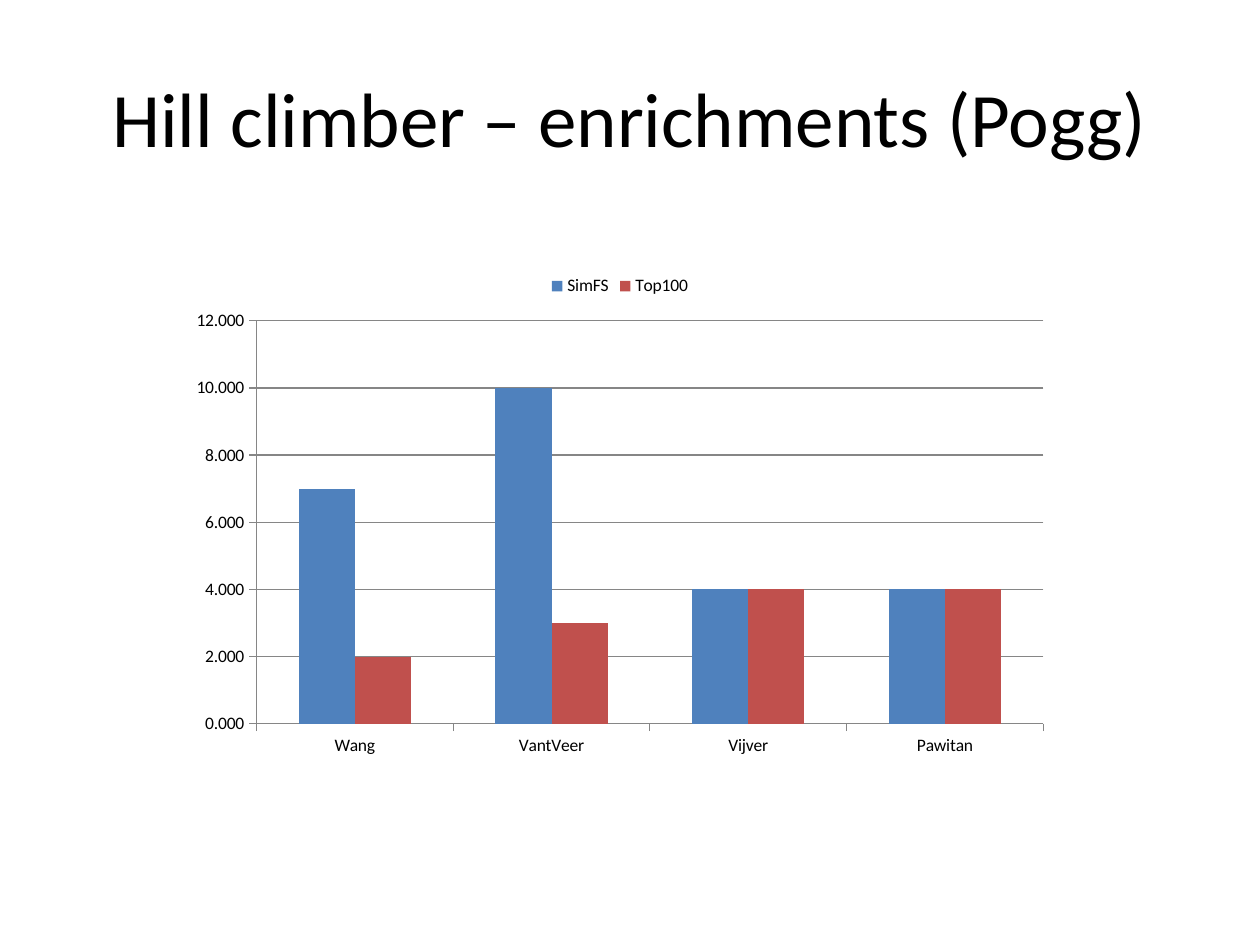
from pptx import Presentation
from pptx import util as u
from pptx.chart.data import CategoryChartData
from pptx.dml.color import RGBColor
from pptx.enum import chart as ch, text

BLACK = RGBColor(0x00, 0x00, 0x00)
GREY = RGBColor(0x86, 0x86, 0x86)
BLUE = RGBColor(0x4F, 0x81, 0xBD)
RED = RGBColor(0xC0, 0x50, 0x4D)


class Deck:
    """Holds the style and the current slide; boxes are shares of its size."""

    font = "Calibri"
    title_size = 44
    chart_size = 10
    line_width = 0.75

    def __init__(self, width, height):
        self.prs = Presentation()
        self.prs.slide_width = u.Inches(width)
        self.prs.slide_height = u.Inches(height)
        self.slide = self.prs.slides.add_slide(self.prs.slide_layouts[6])

    def box(self, left, top, width, height):
        w, h = self.prs.slide_width, self.prs.slide_height
        return int(left * w), int(top * h), int(width * w), int(height * h)

    def style(self, font, size):
        font.name = self.font
        font.size = u.Pt(size)
        font.color.rgb = BLACK

    def rule(self, line):
        line.color.rgb = GREY
        line.width = u.Pt(self.line_width)

    def title(self, wording, *shares):
        frame = self.slide.shapes.add_textbox(*self.box(*shares)).text_frame
        frame.word_wrap = True
        frame.vertical_anchor = text.MSO_ANCHOR.MIDDLE
        frame.text = wording
        heading = frame.paragraphs[0]
        heading.alignment = text.PP_ALIGN.CENTER
        self.style(heading.runs[0].font, self.title_size)

    def columns(self, categories, series, number_format, *shares):
        data = CategoryChartData(number_format=number_format)
        data.categories = categories
        for name, values, _ in series:
            data.add_series(name, values)
        chart = self.slide.shapes.add_chart(
            ch.XL_CHART_TYPE.COLUMN_CLUSTERED, *self.box(*shares), data).chart
        self.style(chart.font, self.chart_size)
        chart.has_title = False

        # Legend
        chart.has_legend = True
        chart.legend.position = ch.XL_LEGEND_POSITION.TOP
        chart.legend.include_in_layout = False

        # Axes and gridlines
        for axis in (chart.category_axis, chart.value_axis):
            axis.major_tick_mark = ch.XL_TICK_MARK.OUTSIDE
            axis.minor_tick_mark = ch.XL_TICK_MARK.NONE
            self.rule(axis.format.line)
        chart.value_axis.has_major_gridlines = True
        self.rule(chart.value_axis.major_gridlines.format.line)
        chart.value_axis.tick_labels.number_format = number_format
        chart.value_axis.tick_labels.number_format_is_linked = False

        # Columns
        plot = chart.plots[0]
        plot.vary_by_categories = False
        plot.gap_width = 150
        plot.overlap = 0
        for columns, (_, _, color) in zip(plot.series, series):
            columns.format.fill.solid()
            columns.format.fill.fore_color.rgb = color
        return chart


def main():
    deck = Deck(10, 7.5)
    deck.title("Hill climber – enrichments (Pogg)", 0.05, 0.04, 0.9, 1 / 6)

    # Enrichments per data set
    enrichments = deck.columns(
        ["Wang", "VantVeer", "Vijver", "Pawitan"],
        [("SimFS", (7, 10, 4, 4), BLUE), ("Top100", (2, 3, 4, 4), RED)],
        "0.000", 1.42 / 10, 2.08 / 7.5, 0.7, 4 / 7.5)
    scale = enrichments.value_axis
    scale.minimum_scale, scale.maximum_scale, scale.major_unit = 0, 12, 2

    deck.prs.save("out.pptx")


if __name__ == "__main__":
    main()
